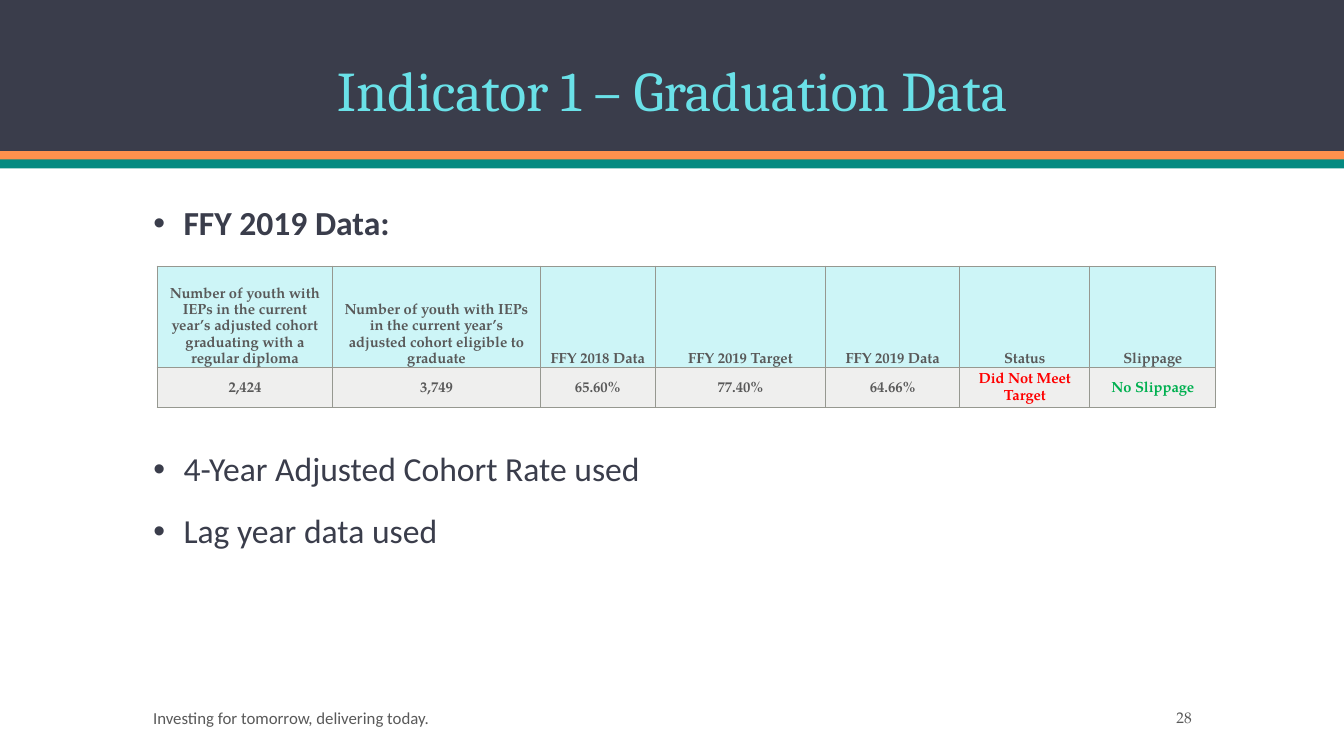
from lxml import etree
from pptx import Presentation
from pptx.dml.color import RGBColor
from pptx.enum.shapes import MSO_SHAPE
from pptx.enum.text import MSO_ANCHOR, MSO_AUTO_SIZE, PP_ALIGN
from pptx.oxml.ns import qn
from pptx.util import Inches, Pt

RECTANGLE = MSO_SHAPE.RECTANGLE
TOP, MIDDLE, BOTTOM = MSO_ANCHOR.TOP, MSO_ANCHOR.MIDDLE, MSO_ANCHOR.BOTTOM
LEFT, CENTER, RIGHT = PP_ALIGN.LEFT, PP_ALIGN.CENTER, PP_ALIGN.RIGHT
NO_AUTOFIT = MSO_AUTO_SIZE.NONE

COLORS = {
    "slate": "3A3D4B", "orange": "FF914D", "teal": "048A81", "aqua": "6AE1E8",
    "gray": "595959", "header": "CDF5F7", "row": "EFEFEE", "border": "969890",
    "red": "FF0000", "green": "00B050",
}
SERIF = "TeX Gyre Pagella"
SANS = "Calibri"

HEADINGS = [
    "Number of youth with IEPs in the current year’s adjusted cohort graduating with a regular diploma",
    "Number of youth with IEPs in the current year’s adjusted cohort eligible to graduate",
    "FFY 2018 Data", "FFY 2019 Target", "FFY 2019 Data", "Status", "Slippage",
]
RESULTS = ["2,424", "3,749", "65.60%", "77.40%", "64.66%", "Did Not Meet Target", "No Slippage"]
RESULT_COLORS = {"Did Not Meet Target": "red", "No Slippage": "green"}
COLUMN_WIDTHS = [1.74, 2.06, 1.14, 1.69, 1.33, 1.29, 1.25]
ROW_HEIGHTS = [0.81, 0.32]


def apply(target, **values):
    for name, value in values.items():
        setattr(target, name, value)


class SlideBuilder:
    def __init__(self, slide):
        self.slide = slide
        self.shapes = slide.shapes

    def wording(self, paragraph, text, font, size, color, bold=False, **spacing):
        apply(paragraph, **spacing)
        run = paragraph.add_run()
        run.text = text
        apply(run.font, name=font, size=Pt(size), bold=bold)
        run.font.color.rgb = RGBColor.from_string(COLORS[color])

    def place(self, shape, left, top, width, height):
        apply(shape, left=Inches(left), top=Inches(top),
              width=Inches(width), height=Inches(height))

    def band(self, top, height, color):
        band = self.shapes.add_shape(RECTANGLE, 0, Inches(top), Inches(13.33), Inches(height))
        band.shadow.inherit = False
        band.fill.solid()
        band.fill.fore_color.rgb = RGBColor.from_string(COLORS[color])
        band.line.fill.background()
        self.shapes.title.element.addprevious(band.element)

    def title(self, text):
        title = self.shapes.title
        self.place(title, 0, 0.15, 13.33, 1.13)
        frame = title.text_frame
        apply(frame, vertical_anchor=BOTTOM, auto_size=NO_AUTOFIT)
        self.wording(frame.paragraphs[0], text, "Cambria", 40, "aqua",
                     alignment=CENTER, line_spacing=0.9)

    def bullets(self, items):
        body = self.slide.placeholders[1]
        self.place(body, 1.42, 2, 10.5, 4.75)
        frame = body.text_frame
        apply(frame, vertical_anchor=TOP, auto_size=NO_AUTOFIT)
        for index, (text, bold, space_before) in enumerate(items):
            paragraph = frame.add_paragraph() if index else frame.paragraphs[0]
            self.wording(paragraph, text, SANS, 24, "slate", bold,
                         line_spacing=0.9, space_before=Pt(space_before))
            properties = paragraph._p.get_or_add_pPr()
            properties.set("marL", str(Inches(0.3)))
            properties.set("indent", str(Inches(-0.3)))
            etree.SubElement(properties, qn("a:buFont")).set("typeface", "Arial")
            etree.SubElement(properties, qn("a:buChar")).set("char", "•")

    def footer(self, text, left, width, font, size, alignment):
        box = self.shapes.add_textbox(Inches(left), Inches(6.97), Inches(width), Inches(0.3))
        frame = box.text_frame
        apply(frame, word_wrap=True, vertical_anchor=MIDDLE)
        self.wording(frame.paragraphs[0], text, font, size, "gray", alignment=alignment)

    def cell(self, cell, text, fill, color, anchor, **spacing):
        apply(cell, vertical_anchor=anchor, margin_left=Inches(0.07),
              margin_right=Inches(0.07), margin_top=0, margin_bottom=0)
        properties = cell._tc.get_or_add_tcPr()
        for side in ("lnL", "lnR", "lnT", "lnB"):
            border = etree.SubElement(properties, qn(f"a:{side}"), w=str(Pt(1)))
            paint = etree.SubElement(border, qn("a:solidFill"))
            etree.SubElement(paint, qn("a:srgbClr")).set("val", COLORS["border"])
        cell.fill.solid()
        cell.fill.fore_color.rgb = RGBColor.from_string(COLORS[fill])
        self.wording(cell.text_frame.paragraphs[0], text, SERIF, 10.5, color, True,
                     alignment=CENTER, line_spacing=1.15, space_before=Pt(3), **spacing)

    def graduation_table(self):
        table = self.shapes.add_table(
            len(ROW_HEIGHTS), len(HEADINGS), Inches(1.56), Inches(2.64),
            Inches(sum(COLUMN_WIDTHS)), Inches(sum(ROW_HEIGHTS))).table
        apply(table, first_row=False, horz_banding=False)
        for column, width in zip(table.columns, COLUMN_WIDTHS):
            column.width = Inches(width)
        for row, height in zip(table.rows, ROW_HEIGHTS):
            row.height = Inches(height)
        for index, (heading, result) in enumerate(zip(HEADINGS, RESULTS)):
            self.cell(table.cell(0, index), heading, "header", "gray", BOTTOM)
            self.cell(table.cell(1, index), result, "row",
                      RESULT_COLORS.get(result, "gray"), MIDDLE, space_after=Pt(3))


def main():
    presentation = Presentation()
    apply(presentation, slide_width=Inches(13.33), slide_height=Inches(7.5))
    builder = SlideBuilder(presentation.slides.add_slide(presentation.slide_layouts[1]))
    builder.band(0, 1.5, "slate")
    builder.band(1.5, 0.09, "orange")
    builder.band(1.58, 0.09, "teal")
    builder.title("Indicator 1 – Graduation Data")
    builder.bullets([
        ("FFY 2019 Data:", True, 18),
        ("4-Year Adjusted Cohort Rate used", False, 150),
        ("Lag year data used", False, 18),
    ])
    builder.footer("Investing for tomorrow, delivering today.", 1.42, 6.83, SANS, 12, LEFT)
    builder.footer("28", 10.42, 1.5, SERIF, 11, RIGHT)
    builder.graduation_table()
    presentation.save("out.pptx")


if __name__ == "__main__":
    main()
